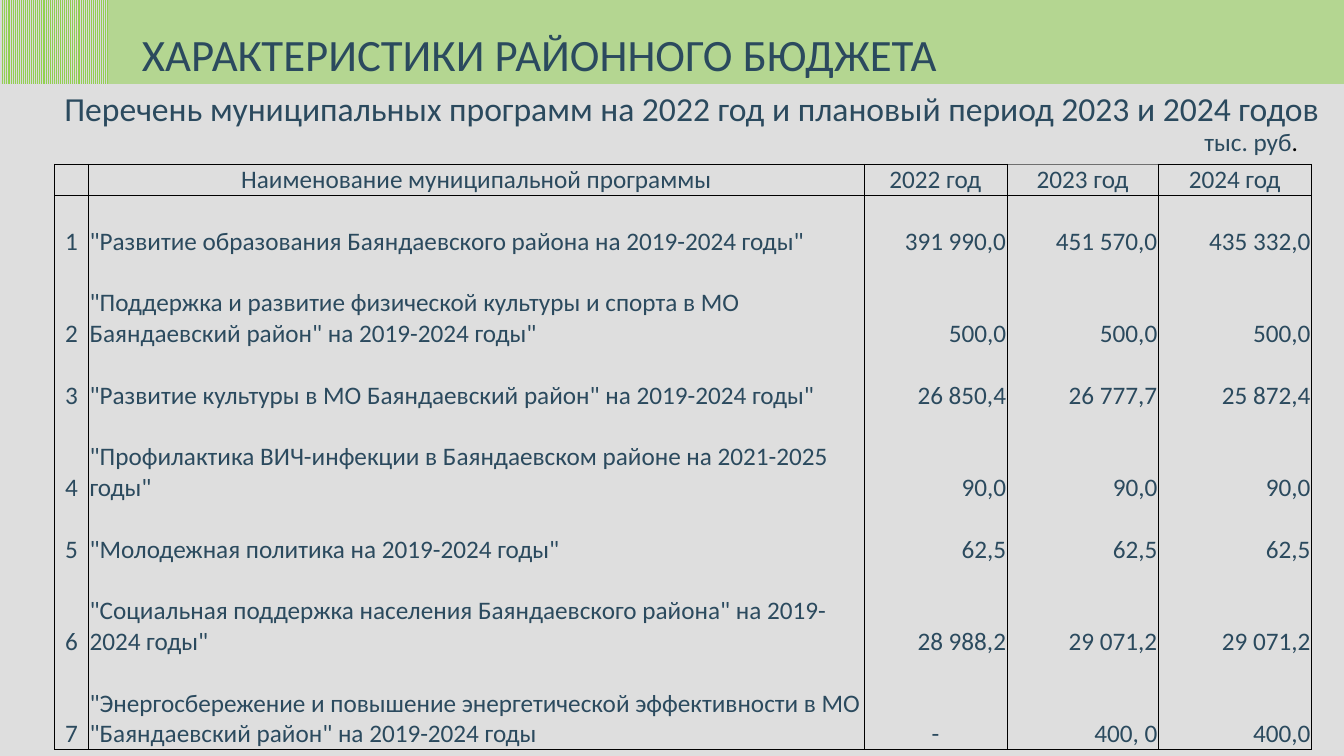
from lxml import etree
from pptx import Presentation
from pptx.dml.color import RGBColor
from pptx.enum.dml import MSO_PATTERN
from pptx.enum.shapes import MSO_SHAPE
from pptx.enum.text import MSO_ANCHOR, MSO_AUTO_SIZE, PP_ALIGN
from pptx.oxml.ns import qn
from pptx.util import Pt

RECT = MSO_SHAPE.RECTANGLE
STRIPES = MSO_PATTERN.LIGHT_VERTICAL
BOTTOM = MSO_ANCHOR.BOTTOM
GROW = MSO_AUTO_SIZE.SHAPE_TO_FIT_TEXT
LEFT, MID, RIGHT = PP_ALIGN.LEFT, PP_ALIGN.CENTER, PP_ALIGN.RIGHT

INK = RGBColor(0x2B, 0x4A, 0x5E)
BLACK = RGBColor(0, 0, 0)
GREY = RGBColor(0x6F, 0x6F, 0x6F)
PAPER = RGBColor(0xDE, 0xDE, 0xDE)
GREEN = RGBColor(0x92, 0xD0, 0x50)
SILVER = RGBColor(0xD9, 0xD9, 0xD9)

FONT = "Calibri"
LINE = 22
COLS = (24.5, 553.7, 102.2, 108, 109.4)
HEAD = ("", "Наименование муниципальной программы", "2022 год", "2023 год", "2024 год")
ROWS = (
    (2, '"Развитие образования Баяндаевского района на 2019-2024 годы"',
     "391 990,0", "451 570,0", "435 332,0"),
    (3, '"Поддержка и развитие физической культуры и спорта в МО Баяндаевский район" на 2019-2024 годы"',
     "500,0", "500,0", "500,0"),
    (2, '"Развитие культуры в МО Баяндаевский район" на 2019-2024 годы"',
     "26 850,4", "26 777,7", "25 872,4"),
    (3, '"Профилактика ВИЧ-инфекции в Баяндаевском районе на 2021-2025 годы"',
     "90,0", "90,0", "90,0"),
    (2, '"Молодежная политика на 2019-2024 годы"',
     "62,5", "62,5", "62,5"),
    (3, '"Социальная поддержка населения Баяндаевского района" на 2019-2024 годы"',
     "28 988,2", "29 071,2", "29 071,2"),
    (3, '"Энергосбережение и повышение энергетической эффективности в МО "Баяндаевский район" на 2019-2024 годы',
     "-", "400, 0", "400,0"),
)


def write(frame, text, size=18, color=INK, align=LEFT):
    """Add a formatted run to the first paragraph of a text frame."""
    par = frame.paragraphs[0]
    par.alignment = align
    par.font.size = Pt(size)
    run = par.add_run()
    run.text = text
    run.font.size = Pt(size)
    run.font.name = FONT
    run.font.color.rgb = color


def label(slide, box, text, size):
    """Place an unwrapped text box and return its frame."""
    frame = slide.shapes.add_textbox(*map(Pt, box)).text_frame
    frame.word_wrap = False
    frame.auto_size = GROW
    write(frame, text, size=size)
    return frame


def block(slide, box):
    """Place a plain rectangle without outline."""
    shape = slide.shapes.add_shape(RECT, *map(Pt, box))
    shape.shadow.inherit = False
    shape.line.fill.background()
    return shape


def banner(slide, x, y, w, h):
    """Draw the green band, its title and the striped corner."""
    band = block(slide, (x, y, w, h))
    band.fill.solid()
    band.fill.fore_color.rgb = GREEN
    tint = band.fill._xPr.find(".//" + qn("a:srgbClr"))
    etree.SubElement(tint, qn("a:alpha"), val="54000")
    label(slide, (x + 94.3, y + 15.8, 589, 46), "ХАРАКТЕРИСТИКИ РАЙОННОГО БЮДЖЕТА", 32)
    fill = block(slide, (x, y, 77, h)).fill
    fill.patterned()
    fill.pattern = STRIPES
    fill.fore_color.rgb = GREEN
    fill.back_color.rgb = SILVER


def border(cell, edges):
    """Set cell edges, given as side: (colour, width) or None."""
    props = cell._tc.get_or_add_tcPr()
    for spot, side in enumerate("LRTB"):
        line = etree.Element(qn("a:ln" + side))
        props.insert(spot, line)
        if edges.get(side):
            color, width = edges[side]
            line.set("w", str(Pt(width)))
            fill = etree.SubElement(line, qn("a:solidFill"))
            etree.SubElement(fill, qn("a:srgbClr"), val=str(color))
        else:
            line.set("w", "0")
            etree.SubElement(line, qn("a:noFill"))


def edges(row, col):
    """Return the borders of the cell at a row and column."""
    thin = (BLACK, 0.5)
    sides = {"L": thin, "R": thin}
    if row == 0:
        sides.update(T=(GREY, 1) if col == 3 else thin, B=thin)
    elif row == 1:
        sides["T"] = thin
    elif row == len(ROWS):
        sides["B"] = (BLACK, 1)
    return sides


def budget(slide, x, y, w):
    """Build the table of programmes and yearly sums."""
    data = [HEAD] + [(str(n), *row[1:]) for n, row in enumerate(ROWS, 1)]
    highs = [LINE] + [row[0] * LINE for row in ROWS]
    box = (x, y, w, sum(highs))
    table = slide.shapes.add_table(len(data), len(COLS), *map(Pt, box)).table
    table.first_row = table.horz_banding = False
    for col, wide in zip(table.columns, COLS):
        col.width = Pt(wide)
    for r, (texts, high) in enumerate(zip(data, highs)):
        table.rows[r].height = Pt(high)
        for c, text in enumerate(texts):
            cell = table.cell(r, c)
            cell.margin_left = cell.margin_right = cell.margin_top = Pt(0.6)
            cell.margin_bottom = 0
            cell.vertical_anchor = BOTTOM
            cell.fill.background()
            align = MID if r == 0 or c == 0 or text == "-" else LEFT if c == 1 else RIGHT
            write(cell.text_frame, text, align=align)
            border(cell, edges(r, c))


def main():
    """Build the slide and save it."""
    deck = Presentation()
    deck.slide_width, deck.slide_height = Pt(960), Pt(540)
    slide = deck.slides.add_slide(deck.slide_layouts[6])
    back = slide.background.fill
    back.solid()
    back.fore_color.rgb = PAPER
    banner(slide, 0, 0, 960, 60)
    label(slide, (38.9, 59.4, 918.7, 36),
          "Перечень муниципальных программ на 2022 год и плановый период 2023 и 2024 годов", 24)
    budget(slide, 38.9, 117.2, sum(COLS))
    unit = label(slide, (853.2, 86.8, 82, 29), "тыс. руб", 18)
    write(unit, ".", color=BLACK)
    deck.save("out.pptx")


if __name__ == "__main__":
    main()
